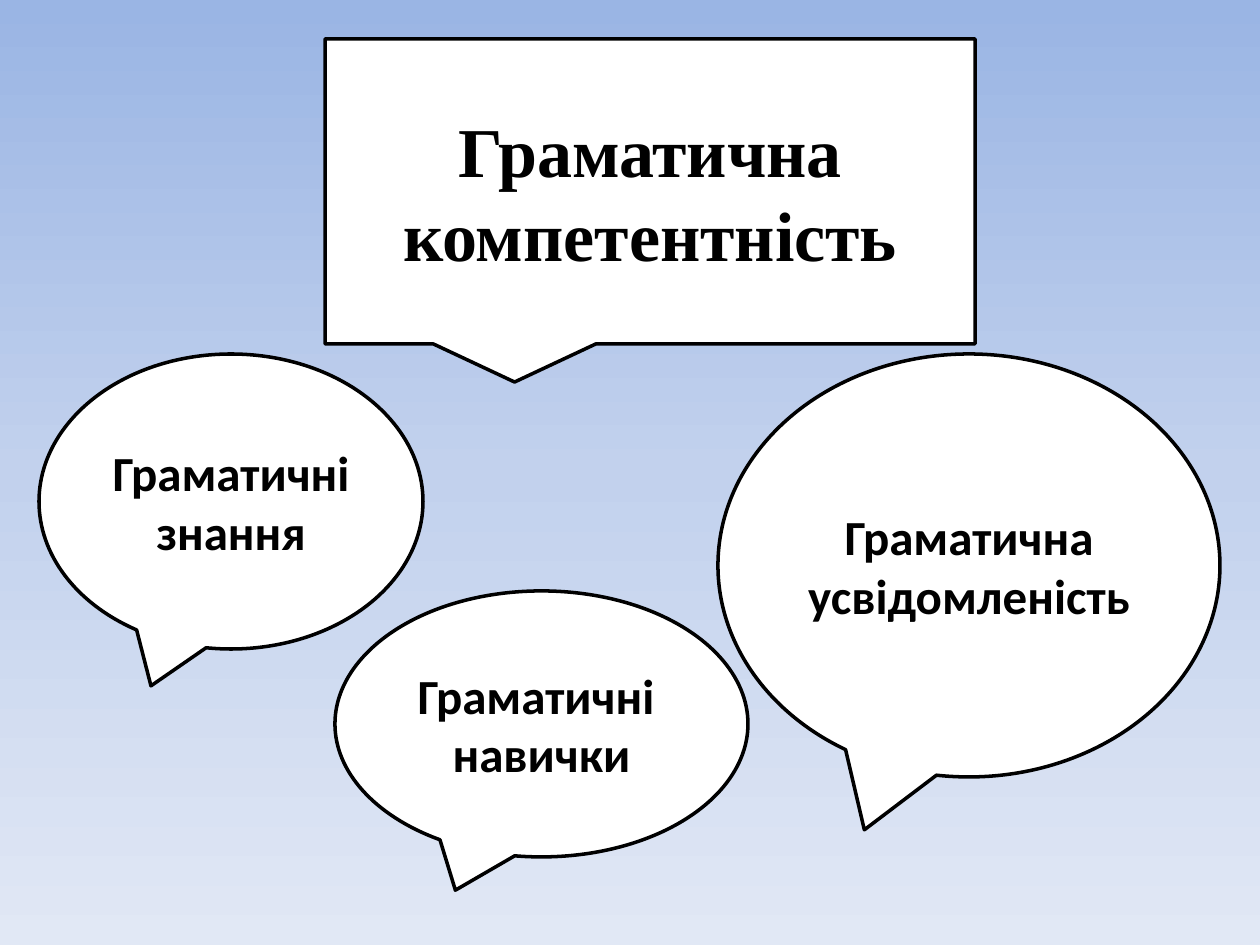
from copy import deepcopy

from pptx import Presentation
from pptx import util as u
from pptx.dml.color import RGBColor
from pptx.enum import shapes, text
from pptx.oxml.ns import qn

PX_PER_INCH = 126
RECT = shapes.MSO_SHAPE.RECTANGULAR_CALLOUT
OVAL = shapes.MSO_SHAPE.OVAL_CALLOUT


def px(n):
    return u.Emu(round(n * 914400 / PX_PER_INCH))


def rgb(value):
    return RGBColor.from_string(value)


class Deck:
    ink = "000000"
    paper = "FFFFFF"
    line_width = u.Pt(2)

    def __init__(self, width, height):
        self.prs = Presentation()
        self.prs.slide_width, self.prs.slide_height = px(width), px(height)
        self.s = self.prs.slides.add_slide(self.prs.slide_layouts[6])

    def background(self, colors):
        """Fill the slide from top to bottom with evenly spaced colours."""
        fill = self.s.background.fill
        fill.gradient()
        fill.gradient_angle = 270
        stops = self.s.element.find(".//" + qn("a:gsLst"))
        for _ in colors[2:]:
            stops.append(deepcopy(stops[0]))
        for i, (stop, color) in enumerate(zip(fill.gradient_stops, colors)):
            stop.color.rgb = rgb(color)
            stop.position = i / (len(colors) - 1)

    def callout(self, kind, box, lines, size, font):
        sp = self.s.shapes.add_shape(kind, *map(px, box))
        sp.shadow.inherit = False
        sp.fill.solid()
        sp.fill.fore_color.rgb = rgb(self.paper)
        sp.line.color.rgb = rgb(self.ink)
        sp.line.width = self.line_width
        tf = sp.text_frame
        tf.word_wrap = True
        tf.vertical_anchor = text.MSO_ANCHOR.MIDDLE
        tf.text = "\n".join(lines)
        for p in tf.paragraphs:
            p.alignment = text.PP_ALIGN.CENTER
            p.font.name = font
            p.font.size = u.Pt(size)
            p.font.bold = True
            p.font.color.rgb = rgb(self.ink)


def main():
    deck = Deck(1260, 945)
    deck.background(["9AB5E4", "C2D1ED", "E1E8F5"])
    deck.callout(RECT, (325, 39, 650, 305),
                 ["Граматична", "компетентність"], 40, "Times New Roman")
    components = [
        ((39, 354, 384, 295), ["Граматичні ", "знання"]),
        ((335, 591, 413, 266), ["Граматичні ", "навички"]),
        ((718, 354, 502, 423), ["Граматична", "усвідомленість"]),
    ]
    for box, lines in components:
        deck.callout(OVAL, box, lines, 28, "Calibri")
    deck.prs.save("out.pptx")


if __name__ == "__main__":
    main()
